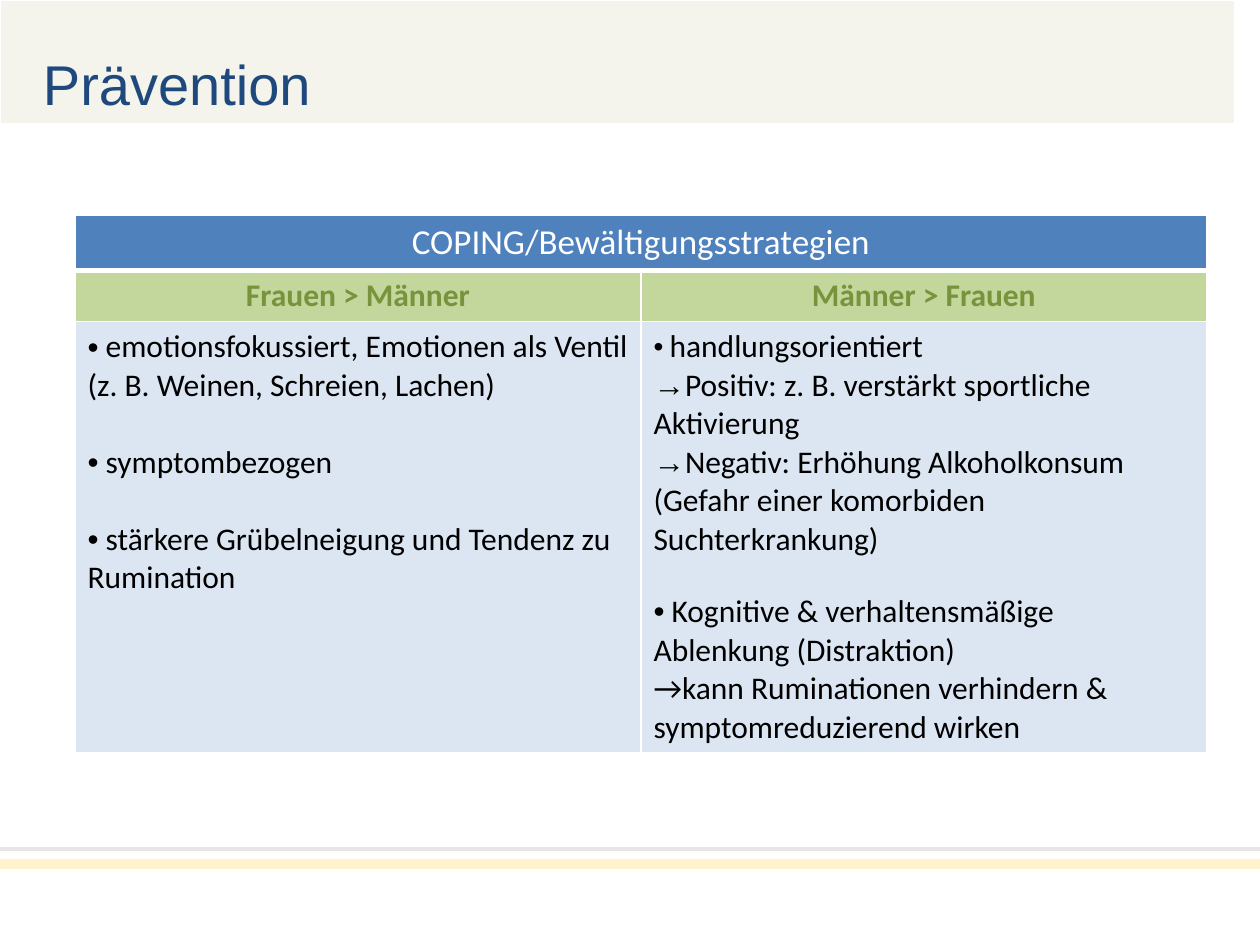
"""Build the slide on coping strategies of women and men."""
from lxml.etree import SubElement
from pptx import Presentation
from pptx.dml.color import RGBColor
from pptx.enum.shapes import MSO_CONNECTOR as Connector, MSO_SHAPE as Shape
from pptx.enum.text import MSO_ANCHOR as Anchor, PP_ALIGN as Align
from pptx.oxml import parse_xml
from pptx.oxml.ns import nsdecls, qn
from pptx.util import Emu, Pt

PX = 914400 // 126
COLORS = {
    "white": "FFFFFF", "cream": "F4F3EC", "gray": "E7E6E6", "yellow": "FFF2CC",
    "navy": "1F497D", "blue": "4F81BD", "green": "C3D69B", "olive": "77933C",
    "pale": "DCE6F2", "black": "000000",
}
HEADING = "COPING/Bewältigungsstrategien"
GROUPS = ["Frauen > Männer", "Männer > Frauen"]
STRATEGIES = [
    [
        ("•", 0, [(" emotionsfokussiert, Emotionen als Ventil (z. B. Weinen, Schreien, Lachen)", 18)]),
        ("•", 22, [(" symptombezogen", 18)]),
        ("•", 22, [(" stärkere Grübelneigung und Tendenz zu Rumination", 18)]),
    ],
    [
        ("•", 0, [(" ", 16), ("handlungsorientiert", 18)]),
        ("→", 0, [("Positiv: z. B. verstärkt sportliche Aktivierung", 18)]),
        ("→", 0, [("Negativ: Erhöhung Alkoholkonsum (Gefahr einer komorbiden Suchterkrankung)", 18)]),
        ("•", 19.5, [(" Kognitive & verhaltensmäßige Ablenkung (Distraktion)", 18)]),
        (None, 0, [("→kann Ruminationen verhindern & symptomreduzierend wirken", 18)]),
    ],
]


def px(*lengths):
    return [Emu(length * PX) for length in lengths]


def rgb(name):
    return RGBColor.from_string(COLORS[name])


def assign(target, values):
    for name, value in values.items():
        setattr(target, name, value)


class Designer:
    def __init__(self, deck):
        self.font = "Calibri"
        self.page = deck.slides.add_slide(deck.slide_layouts[5])

    def span(self, para, text, size, color, bold=False, font=None):
        span = para.add_run()
        span.text = text
        assign(span.font, {"name": font or self.font, "size": Pt(size), "bold": bold})
        span.font.color.rgb = rgb(color)

    def bar(self, left, top, width, height, fill, line=None):
        bar = self.page.shapes.add_shape(Shape.RECTANGLE, *px(left, top, width, height))
        bar.shadow.inherit = False
        bar.fill.solid()
        bar.fill.fore_color.rgb = rgb(fill)
        if line:
            bar.line.color.rgb = rgb(line)
            bar.line.width = Pt(0.75)
        else:
            bar.line.fill.background()

    def rule(self, left, top, right, color, width):
        rule = self.page.shapes.add_connector(Connector.STRAIGHT, *px(left, top, right, top))
        rule.line.color.rgb = rgb(color)
        rule.line.width = Pt(width)
        SubElement(rule._element.spPr, qn("a:effectLst"))

    def title(self, text, left, top, width, height):
        title = self.page.shapes.title
        self.page.shapes._spTree.append(title._element)
        places = px(left, top, width, height)
        assign(title, dict(zip(("left", "top", "width", "height"), places)))
        margin_left, margin_top = px(9, 12)
        frame = title.text_frame
        assign(frame, {"margin_left": margin_left, "margin_top": margin_top, "margin_bottom": 0,
                       "vertical_anchor": Anchor.TOP, "word_wrap": True})
        para = frame.paragraphs[0]
        para.alignment = Align.LEFT
        self.span(para, text, 32, "navy", font="Arial")

    def table(self, left, top, widths, heights):
        frame = self.page.shapes.add_table(
            len(heights), len(widths), *px(left, top, sum(widths), sum(heights)))
        for column, width in zip(frame.table.columns, px(*widths)):
            column.width = width
        for row, height in zip(frame.table.rows, px(*heights)):
            row.height = height
        return frame.table

    def paint(self, cell, fill, bottom=1):
        cell.fill.solid()
        cell.fill.fore_color.rgb = rgb(fill)
        properties = cell._tc.get_or_add_tcPr()
        for place, (side, width) in enumerate(zip("LRTB", (1, 1, 1, bottom))):
            properties.insert(place, parse_xml(
                f'<a:ln{side} {nsdecls("a")} w="{Pt(width)}"><a:solidFill>'
                f'<a:srgbClr val="{COLORS["white"]}"/></a:solidFill></a:ln{side}>'))

    def heading(self, cell, text, size, color, bold=False):
        para = cell.text_frame.paragraphs[0]
        para.alignment = Align.CENTER
        self.span(para, text, size, color, bold)

    def bullets(self, cell, items):
        frame = cell.text_frame
        for number, (mark, gap, spans) in enumerate(items):
            para = frame.add_paragraph() if number else frame.paragraphs[0]
            if gap:
                para.space_before = Pt(gap)
            if mark:
                properties = para._p.get_or_add_pPr()
                SubElement(properties, qn("a:buFont"), typeface="Arial")
                SubElement(properties, qn("a:buChar"), char=mark)
            for text, size in spans:
                self.span(para, text, size, "black")


def main():
    deck = Presentation()
    deck.slide_width, deck.slide_height = px(1260, 945)
    designer = Designer(deck)
    designer.bar(0, 0, 1235, 124, "cream", "white")
    designer.rule(0, 849, 1260, "gray", 2)
    designer.bar(0, 859, 1260, 10, "yellow")
    designer.title("Prävention", 34, 37, 932, 69)

    table = designer.table(75, 215, [566, 566], [55, 51, 431])
    for column in range(2):
        designer.paint(table.cell(0, column), "blue", bottom=3)
    table.cell(0, 0).merge(table.cell(0, 1))
    designer.heading(table.cell(0, 0), HEADING, 20, "white")
    for column, (group, items) in enumerate(zip(GROUPS, STRATEGIES)):
        designer.paint(table.cell(1, column), "green")
        designer.heading(table.cell(1, column), group, 18, "olive", bold=True)
        designer.paint(table.cell(2, column), "pale")
        designer.bullets(table.cell(2, column), items)
    deck.save("out.pptx")


if __name__ == "__main__":
    main()
